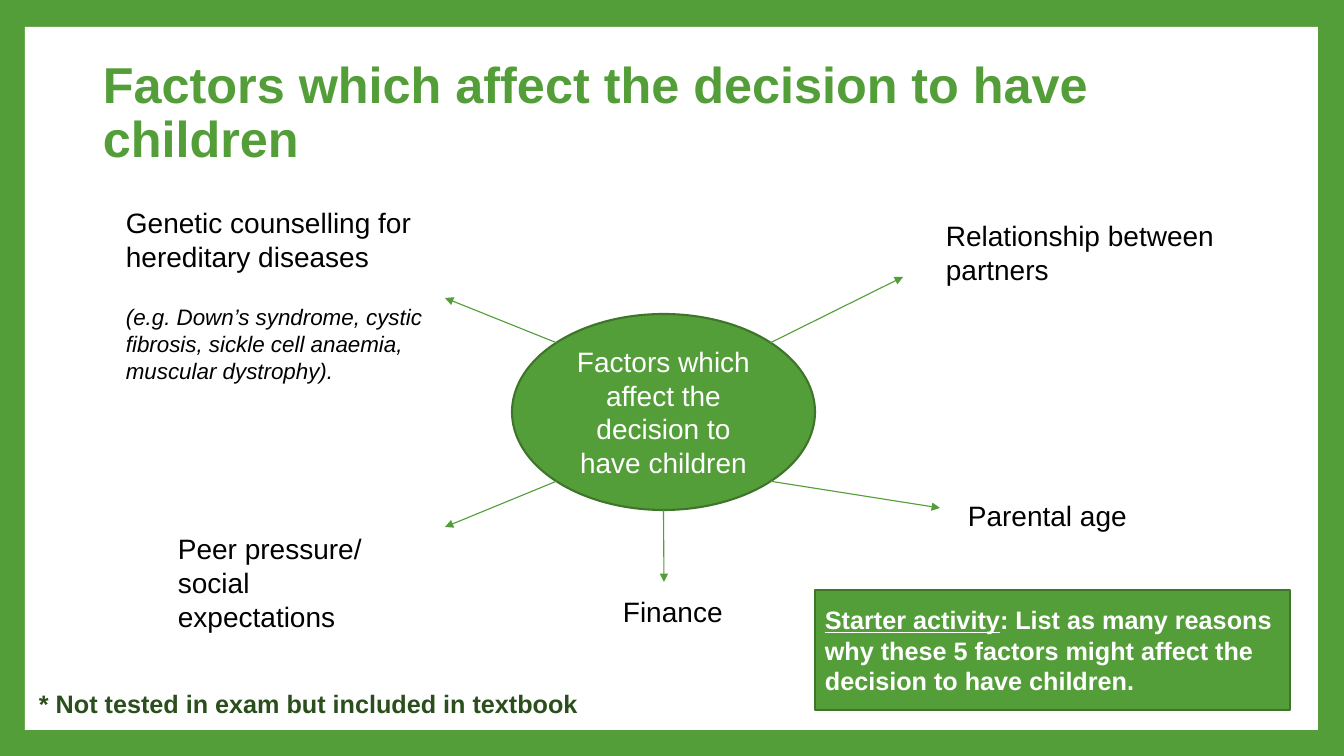
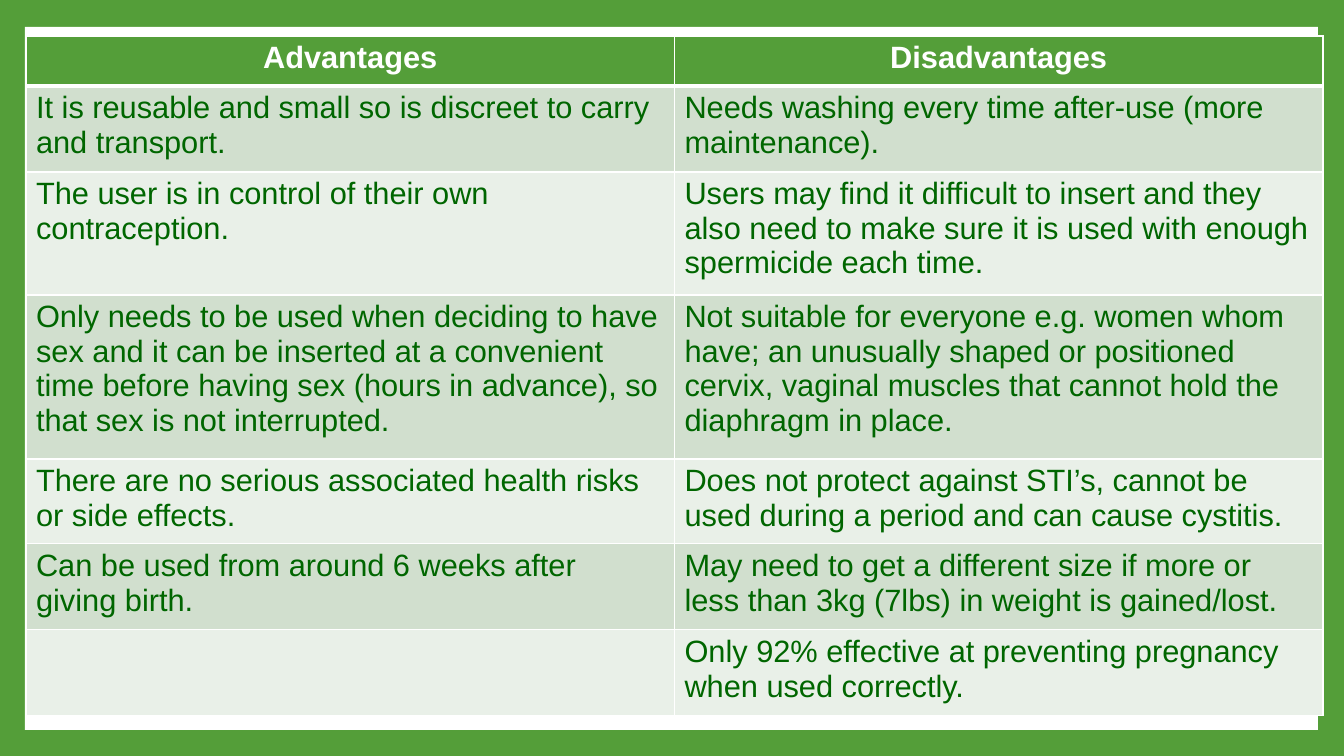
"""Builds two slides: a factor diagram and an advantages table."""
from math import cos, sin, radians
from lxml.etree import SubElement
from pptx import Presentation
from pptx.dml.color import RGBColor
from pptx.enum.shapes import MSO_CONNECTOR, MSO_SHAPE
from pptx.enum.text import MSO_ANCHOR, PP_ALIGN
from pptx.oxml.ns import qn
from pptx.util import Emu, Pt

W, H = 1344, 756
SCALE = 12192000 / W
FONT = "Arial"
COLORS = {
    "green": "549E39", "edge": "3E752A", "deep": "2A4F1C", "cell": "006600",
    "white": "FFFFFF", "black": "000000", "band": "D1DFCE", "pale": "E9F0E8",
}
PANEL = (25, 27, 1293, 703)

TOPIC = "Factors which affect the decision to have children"
TITLE_BOX = (93, 41, 1159, 146)
OVAL = (512, 314, 303, 196)
RAYS = [
    (-45, (903, 277)),
    (45, (940, 508)),
    (-135, (445, 298)),
    (135, (445, 527)),
    (90, (664, 582)),
]
FACTORS = [
    ((936, 214, 310, 78), "Relationship between partners"),
    ((958, 494, 310, 44), "Parental age"),
    ((613, 590, 168, 44), "Finance"),
    ((168, 527, 254, 78), "Peer pressure/ social expectations"),
]
GENETIC_BOX = (116, 201, 342, 194)
GENETIC = "Genetic counselling for hereditary diseases"
EXAMPLES = "(e.g. Down’s syndrome, cystic fibrosis, sickle cell anaemia, muscular dystrophy)."
STARTER_BOX = (815, 590, 475, 120)
STARTER = [
    ("Starter activity", True),
    (": List as many reasons why these 5 factors might affect the decision to have children.", False),
]
NOTE_BOX = (29, 683, 585, 40)
NOTE = "* Not tested in exam but included in textbook"

TABLE_BOX = (26, 36, 1297, 680)
ROW_HEIGHTS = [50, 86, 123, 164, 85, 86, 86]
ROWS = [
    ("Advantages", "Disadvantages"),
    ("It is reusable and small so is discreet to carry and transport.",
     "Needs washing every time after-use (more maintenance)."),
    ("The user is in control of their own contraception.",
     "Users may find it difficult to insert and they also need to make sure it is used "
     "with enough spermicide each time."),
    ("Only needs to be used when deciding to have sex and it can be inserted at a convenient "
     "time before having sex (hours in advance), so that sex is not interrupted.",
     "Not suitable for everyone e.g. women whom have; an unusually shaped or positioned "
     "cervix, vaginal muscles that cannot hold the diaphragm in place."),
    ("There are no serious associated health risks or side effects.",
     "Does not protect against STI’s, cannot be used during a period and can cause cystitis."),
    ("Can be used from around 6 weeks after giving birth.",
     "May need to get a different size if more or less than 3kg (7lbs) in weight is gained/lost."),
    ("", "Only 92% effective at preventing pregnancy when used correctly."),
]


def px(n):
    return Emu(round(n * SCALE))


def rgb(name):
    return RGBColor.from_string(COLORS[name])


def paint(obj, color):
    obj.fill.solid()
    obj.fill.fore_color.rgb = rgb(color)


def add_run(p, text, size, color="black", bold=False, italic=False, underline=False):
    r = p.add_run()
    r.text = text
    f = r.font
    f.name, f.size, f.bold, f.italic, f.underline = FONT, Pt(size), bold, italic, underline
    f.color.rgb = rgb(color)


def add_text(s, box, text, size, color="black", bold=False):
    tf = s.shapes.add_textbox(*map(px, box)).text_frame
    tf.word_wrap = True
    add_run(tf.paragraphs[0], text, size, color, bold)
    return tf


def add_shape(s, kind, box, fill, edge=None):
    sp = s.shapes.add_shape(kind, *map(px, box))
    sp.shadow.inherit = False
    paint(sp, fill)
    if edge:
        sp.line.color.rgb = rgb(edge)
        sp.line.width = Pt(1.5)
    else:
        sp.line.fill.background()
    return sp


def add_arrow(s, start, end):
    cx = s.shapes.add_connector(MSO_CONNECTOR.STRAIGHT, *map(px, start + end))
    cx.line.color.rgb = rgb("green")
    cx.line.width = Pt(0.79)
    SubElement(cx.line._get_or_add_ln(), qn("a:tailEnd"), type="triangle")
    SubElement(cx._element.spPr, qn("a:effectLst"))


def add_borders(cell, header):
    tcPr = cell._tc.get_or_add_tcPr()
    for i, side in enumerate(("lnL", "lnR", "lnT", "lnB")):
        width = Pt(3 if header and side == "lnB" else 1)
        ln = tcPr.makeelement(qn(f"a:{side}"), {"w": str(width)})
        fill = SubElement(ln, qn("a:solidFill"))
        SubElement(fill, qn("a:srgbClr"), val=COLORS["white"])
        tcPr.insert(i, ln)


def new_slide(prs):
    s = prs.slides.add_slide(prs.slide_layouts[6])
    paint(s.background, "green")
    add_shape(s, MSO_SHAPE.RECTANGLE, PANEL, "white")
    return s


def build_diagram(prs):
    s = new_slide(prs)
    tf = add_text(s, TITLE_BOX, TOPIC, 36, "green", True)
    tf.vertical_anchor = MSO_ANCHOR.MIDDLE
    tf.paragraphs[0].line_spacing = 0.9

    oval = add_shape(s, MSO_SHAPE.OVAL, OVAL, "green", "edge")
    p = oval.text_frame.paragraphs[0]
    p.alignment = PP_ALIGN.CENTER
    add_run(p, TOPIC, 20, "white")

    x, y, w, h = OVAL
    for angle, end in RAYS:
        a = radians(angle)
        add_arrow(s, (x + w / 2 * (1 + cos(a)), y + h / 2 * (1 + sin(a))), end)

    for box, text in FACTORS:
        add_text(s, box, text, 20)
    p = add_text(s, GENETIC_BOX, GENETIC, 20).add_paragraph()
    p.space_before = Pt(21.6)
    add_run(p, EXAMPLES, 16, italic=True)

    starter = add_shape(s, MSO_SHAPE.RECTANGLE, STARTER_BOX, "green", "edge")
    p = starter.text_frame.paragraphs[0]
    p.alignment = PP_ALIGN.LEFT
    for text, underline in STARTER:
        add_run(p, text, 18, "white", bold=True, underline=underline)
    add_text(s, NOTE_BOX, NOTE, 18, "deep", True)


def build_table(prs):
    s = new_slide(prs)
    table = s.shapes.add_table(len(ROWS), 2, *map(px, TABLE_BOX)).table
    for col in table.columns:
        col.width = px(TABLE_BOX[2] / 2)
    for i, (height, texts) in enumerate(zip(ROW_HEIGHTS, ROWS)):
        table.rows[i].height = px(height)
        header = i == 0
        for j, text in enumerate(texts):
            cell = table.cell(i, j)
            paint(cell, "green" if header else "band" if i % 2 else "pale")
            add_borders(cell, header)
            p = cell.text_frame.paragraphs[0]
            p.alignment = PP_ALIGN.CENTER if header else PP_ALIGN.LEFT
            if text:
                add_run(p, text, 22, "white" if header else "cell", bold=header)


def main():
    prs = Presentation()
    prs.slide_width, prs.slide_height = px(W), px(H)
    build_diagram(prs)
    build_table(prs)
    prs.save("out.pptx")


if __name__ == "__main__":
    main()
